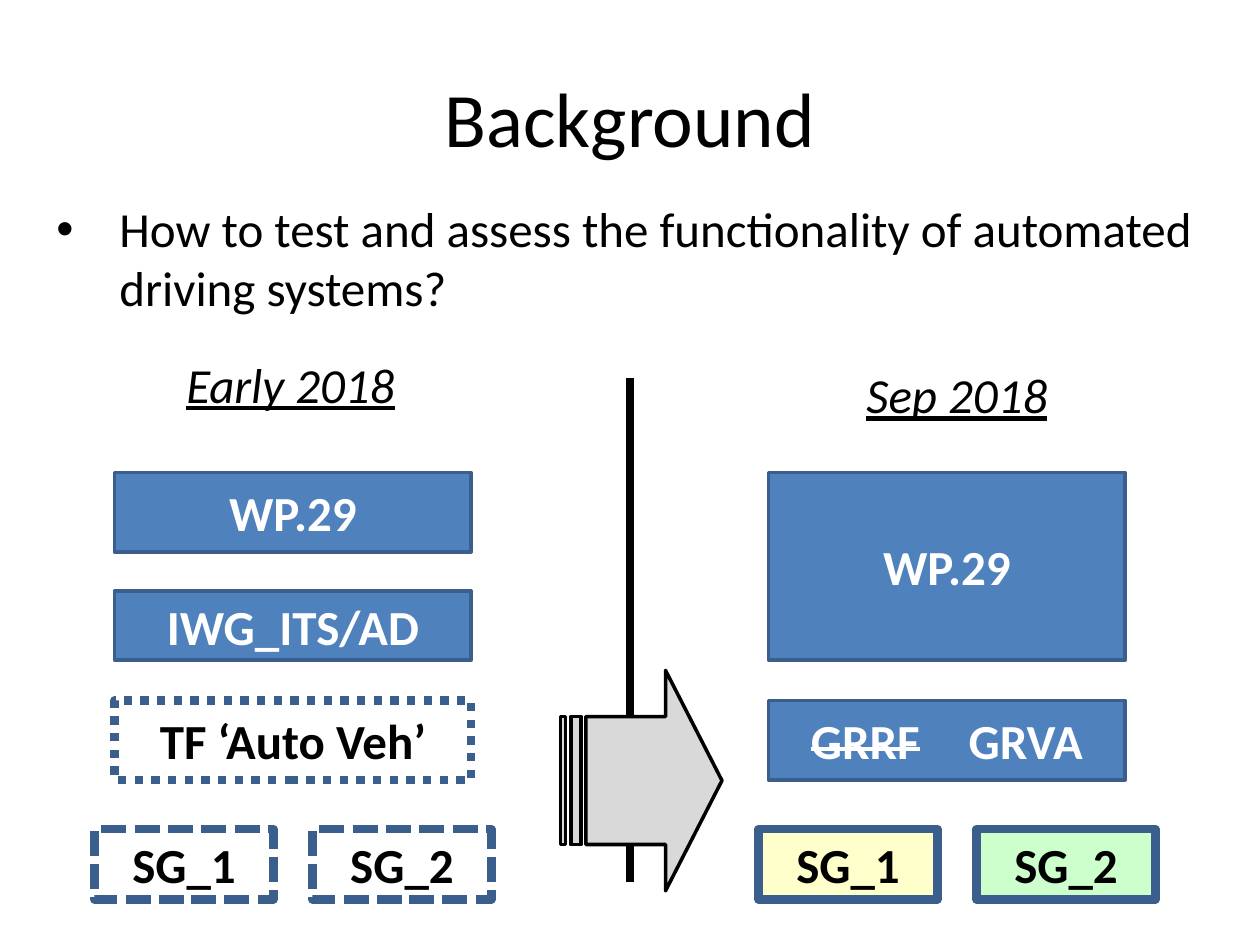
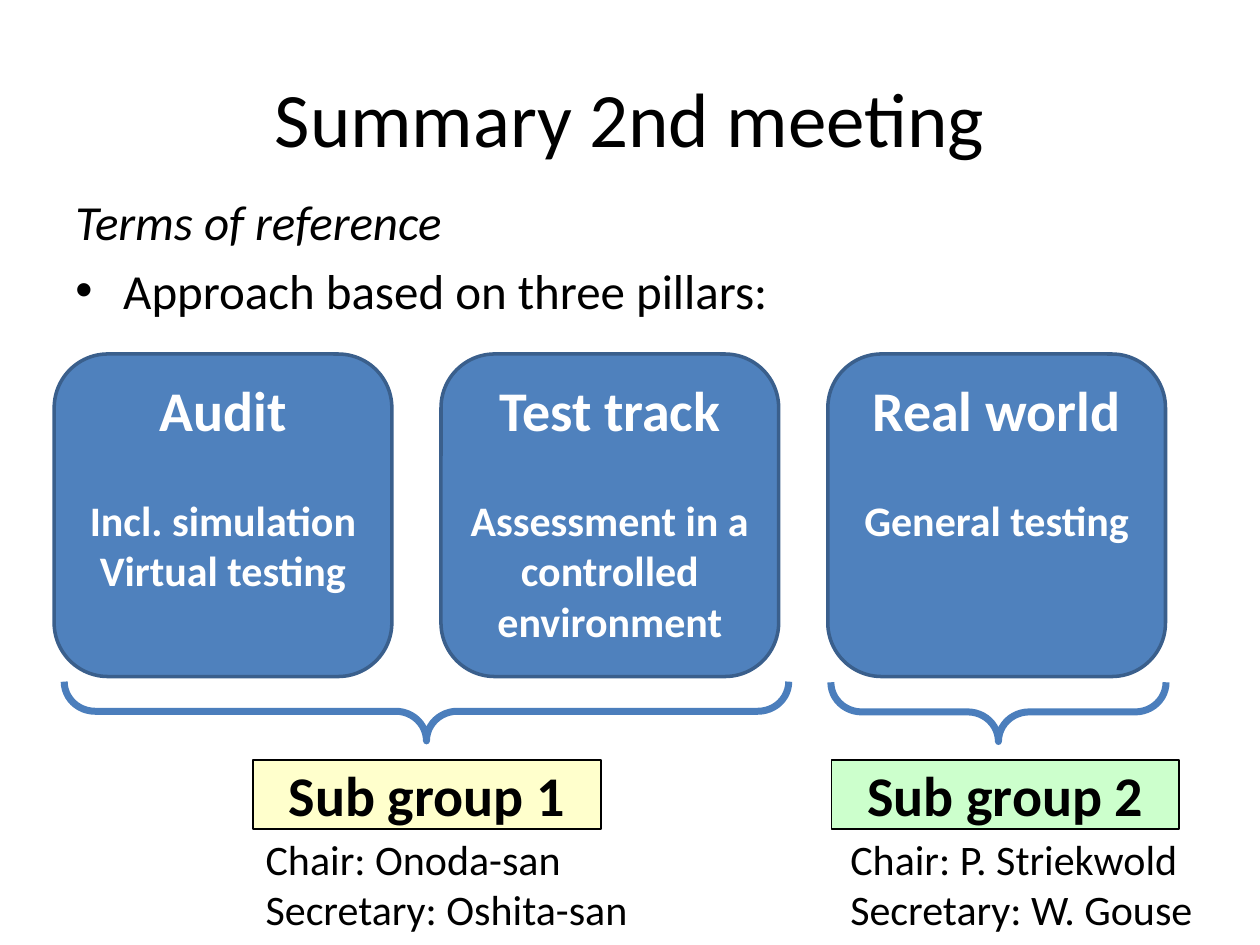
"""Build two slides on the background and pillars of automated driving tests."""
import lxml.etree
import pptx
import pptx.dml.color
import pptx.enum.dml
import pptx.enum.shapes
import pptx.enum.text
import pptx.oxml.ns
import pptx.util

Inches = pptx.util.Inches
Pt = pptx.util.Pt
SHAPE = pptx.enum.shapes.MSO_SHAPE
DASH = pptx.enum.dml.MSO_LINE
ALIGN = pptx.enum.text.PP_ALIGN
ANCHOR = pptx.enum.text.MSO_ANCHOR

COLOURS = {
    "black": "000000", "white": "FFFFFF", "blue": "4F81BD", "edge": "3A5F8C",
    "brace": "4B7EBC", "grey": "D9D9D9", "yellow": "FFFFCC", "green": "CCFFCC",
}


class SlideBuilder:
    """Hold the style and the current slide, and draw each kind of element."""

    font = "Calibri"

    def __init__(self):
        self.deck = pptx.Presentation()
        self.deck.slide_width = Inches(10)
        self.deck.slide_height = Inches(7.5)
        self.page = None

    def colour(self, name):
        return pptx.dml.color.RGBColor.from_string(COLOURS[name])

    def new_page(self, title):
        self.page = self.deck.slides.add_slide(self.deck.slide_layouts[6])
        self.text((0.5, 0.3, 9, 1.25), [[(title, {})]], size=44)

    def fill_text(self, shape, paras, colour="black", align=ALIGN.CENTER,
                  anchor=ANCHOR.MIDDLE, **style):
        frame = shape.text_frame
        frame.word_wrap = True
        frame.vertical_anchor = anchor
        for index, spans in enumerate(paras):
            para = frame.paragraphs[0] if index == 0 else frame.add_paragraph()
            para.alignment = align
            for words, changes in spans:
                span = para.add_run()
                span.text = words
                span.font.color.rgb = self.colour(colour)
                values = {"name": self.font, "size": 28, **style, **changes}
                values["size"] = Pt(values["size"])
                for name, value in values.items():
                    setattr(span.font, name, value)
        return frame.paragraphs

    def text(self, place, paras, **style):
        box = self.page.shapes.add_textbox(*map(Inches, place))
        return self.fill_text(box, paras, **style)

    def bullet(self, para, indent):
        properties = para._p.get_or_add_pPr()
        properties.set("marL", str(Inches(indent)))
        properties.set("indent", str(-Inches(indent)))
        for tag, name, value in (("a:buFont", "typeface", "Arial"), ("a:buChar", "char", "•")):
            mark = lxml.etree.SubElement(properties, pptx.oxml.ns.qn(tag))
            mark.set(name, value)

    def outline(self, shape, fill, edge, weight, dash=None):
        shape.shadow.inherit = False
        if fill:
            shape.fill.solid()
            shape.fill.fore_color.rgb = self.colour(fill)
        else:
            shape.fill.background()
        shape.line.color.rgb = self.colour(edge)
        shape.line.width = Pt(weight)
        if dash:
            shape.line.dash_style = dash

    def shape(self, kind, place, fill=None, edge="edge", weight=2, dash=None,
              adjust=(), turn=0):
        shape = self.page.shapes.add_shape(kind, *map(Inches, place))
        self.outline(shape, fill, edge, weight, dash)
        for index, value in enumerate(adjust):
            shape.adjustments[index] = value
        shape.rotation = turn
        return shape

    def label(self, place, words, fill=None, size=28, **look):
        box = self.shape(SHAPE.RECTANGLE, place, fill, **look)
        colour = "white" if fill == "blue" else "black"
        return self.fill_text(box, [[(words, {})]], colour, size=size, bold=True)

    def curve(self, start, bends, weight, steps=16):
        points = [start]
        for bend in bends:
            corners = (points[-1], *bend)
            for step in range(1, steps + 1):
                t = step / steps
                shares = ((1 - t) ** 3, 3 * t * (1 - t) ** 2, 3 * t * t * (1 - t), t ** 3)
                points.append(tuple(sum(share * corner[axis] for share, corner
                                        in zip(shares, corners)) for axis in (0, 1)))
        builder = self.page.shapes.build_freeform(*points[0], scale=Inches(1))
        builder.add_line_segments(points[1:], close=False)
        self.outline(builder.convert_to_shape(), None, "black", weight)


def draw_background(slides):
    """Draw the change of groups during 2018."""
    slides.new_page("Background")
    left, right, width = 0.91, 6.1, 2.83
    slides.label((left, 3.75, width, 0.63), "WP.29", "blue")
    slides.label((left, 4.69, width, 0.55), "IWG_ITS/AD", "blue")
    slides.label((left, 5.56, width, 0.63), "TF ‘Auto Veh’", weight=4.75, dash=DASH.ROUND_DOT)
    slides.label((right, 3.75, width, 1.49), "WP.29", "blue")

    for start, fills, dash in ((0.75, (None, None), DASH.SQUARE_DOT),
                               (6.02, ("yellow", "green"), None)):
        for index, fill in enumerate(fills):
            slides.label((start + 1.73 * index, 6.58, 1.42, 0.56), f"SG_{index + 1}",
                         fill, weight=4.75, dash=dash)

    for place, words in (((0.89, 2.73, width, 0.63), "Early 2018"),
                         ((6.18, 2.81, width, 0.63), "Sep 2018")):
        slides.text(place, [[(words, {})]], italic=True, underline=True)

    groups = slides.shape(SHAPE.RECTANGLE, (right, 5.56, width, 0.63), "blue")
    paras = slides.fill_text(groups, [[("GRRF", {}), ("　GRVA", {})]], "white", bold=True)
    paras[0].runs[0].font._element.set("strike", "sngStrike")

    slides.curve((5.3, 7.37), [
        ((5.15, 7.16), (5, 6.94), (4.99, 6.74)),
        ((4.98, 6.54), (5.24, 6.35), (5.24, 6.15)),
        ((5.23, 5.95), (4.97, 5.74), (4.97, 5.54)),
        ((4.97, 5.34), (5.25, 5.15), (5.23, 4.95)),
        ((5.22, 4.76), (4.88, 4.57), (4.88, 4.38)),
        ((4.89, 4.18), (5.25, 3.97), (5.26, 3.77)),
        ((5.27, 3.57), (4.96, 3.18), (4.96, 3.18)),
    ], 4.25)
    slides.shape(SHAPE.STRIPED_RIGHT_ARROW, (4.45, 5.32, 1.28, 1.75), "grey", "black",
                 adjust=(0.58, 0.35))

    question = "How to test and assess the functionality of automated driving systems?"
    paras = slides.text((0.35, 1.53, 9.4, 1.04), [[(question, {})]],
                        align=ALIGN.LEFT, anchor=ANCHOR.TOP)
    slides.bullet(paras[0], 0.5)


def draw_summary(slides):
    """Draw the three pillars and the sub groups in charge of them."""
    slides.new_page("Summary 2nd meeting")
    paras = slides.text((0.5, 1.47, 9, 1.2), [
        [("Terms of reference", {"italic": True})],
        [("Approach based on three pillars:", {})],
    ], align=ALIGN.LEFT, anchor=ANCHOR.TOP)
    paras[1].space_before = Pt(5.6)
    slides.bullet(paras[1], 0.38)

    pillars = (("Audit", "Incl. simulation Virtual testing"),
               ("Test track", "Assessment in a controlled environment"),
               ("Real world", "General testing"))
    for index, (heading, detail) in enumerate(pillars):
        pillar = slides.shape(SHAPE.ROUNDED_RECTANGLE,
                              (0.43 + 3.07 * index, 2.81, 2.68, 2.56), "blue")
        paras = slides.fill_text(pillar, [[(heading, {"size": 32})], [(detail, {})]],
                                 "white", anchor=ANCHOR.TOP, size=24, bold=True)
        paras[1].space_before = Pt(29.3)

    sub_groups = (
        ((3.15, 2.77, 0.47, 5.75), 2.01, (2.01, 4.57), "yellow", "Onoda-san", "Oshita-san"),
        ((7.69, 4.32, 0.47, 2.66), 6.6, (6.65, 3.15), "green", "P. Striekwold", "W. Gouse"),
    )
    for number, (brace, left, (start, width), fill, chair, secretary) in enumerate(sub_groups, 1):
        slides.shape(SHAPE.LEFT_BRACE, brace, edge="brace", weight=4,
                     adjust=(0.52, 0.5), turn=270)
        slides.label((left, 6.03, 2.76, 0.55), f"Sub group {number}", fill,
                     size=32, edge="black", weight=1)
        slides.text((start, 6.66, width, 0.71),
                    [[(f"Chair: {chair}", {})], [(f"Secretary: {secretary}", {})]],
                    align=ALIGN.LEFT, size=24)


def main():
    """Build and save the deck."""
    slides = SlideBuilder()
    draw_background(slides)
    draw_summary(slides)
    slides.deck.save("out.pptx")


if __name__ == "__main__":
    main()
